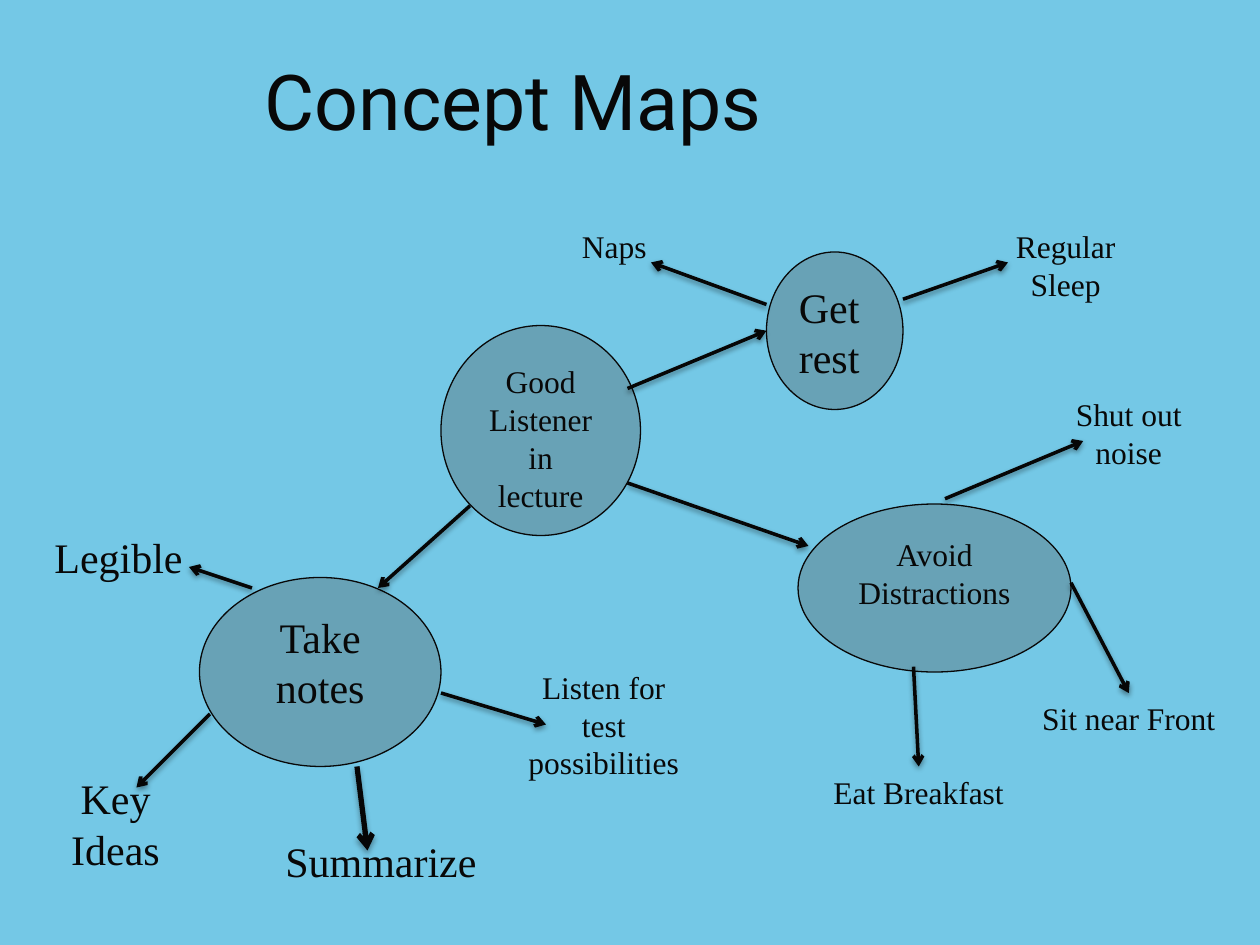
from dataclasses import dataclass

from lxml import etree
from pptx import Presentation
from pptx.dml.color import RGBColor
from pptx.enum.shapes import MSO_CONNECTOR, MSO_SHAPE
from pptx.enum.text import MSO_ANCHOR, MSO_AUTO_SIZE, PP_ALIGN
from pptx.oxml import parse_xml
from pptx.oxml.ns import nsdecls, qn
from pptx.util import Pt

LEFT, CENTER = PP_ALIGN.LEFT, PP_ALIGN.CENTER
TOP, MIDDLE = MSO_ANCHOR.TOP, MSO_ANCHOR.MIDDLE
ELLIPSE, STRAIGHT = MSO_SHAPE.OVAL, MSO_CONNECTOR.STRAIGHT
GROW = MSO_AUTO_SIZE.SHAPE_TO_FIT_TEXT
TITLE_ONLY = 5


@dataclass(frozen=True)
class Theme:
    background: RGBColor = RGBColor(0x74, 0xC8, 0xE6)
    bubble: RGBColor = RGBColor(0x68, 0xA2, 0xB6)
    text: RGBColor = RGBColor(0x08, 0x08, 0x08)
    arrow: RGBColor = RGBColor(0x06, 0x06, 0x06)
    title_font: str = "Roboto"
    body_font: str = "Times New Roman"
    title_size: int = 44
    large: int = 24
    small: int = 18


THEME = Theme()


@dataclass(frozen=True)
class Label:
    """Text in a box or bubble; lengths in points."""
    text: str
    left: float
    top: float
    width: float
    height: float
    size: int = THEME.small
    align: PP_ALIGN = CENTER


@dataclass(frozen=True)
class Arrow:
    """Arrow from (x1, y1) to (x2, y2); lengths in points."""
    x1: float
    y1: float
    x2: float
    y2: float
    weight: float = 2
    shadow_distance: float = 1.6
    shadow_opacity: int = 38


BUBBLES = [
    Label("Good Listener in lecture", 252, 186, 114, 120),
    Label("Get rest", 438, 144, 78, 90, THEME.large, LEFT),
    Label("Avoid Distractions", 456, 288, 156, 96),
    Label("Take notes", 114, 330, 138, 108, THEME.large),
]

DETAILS = [
    # Take notes
    Label("Legible", 24, 300, 96, 36, THEME.large, LEFT),
    Label("Key Ideas", 18, 438, 96, 65.5, THEME.large),
    Label("Listen for test possibilities", 288, 378, 114, 72.7),
    Label("Summarize", 156, 474, 138, 36, THEME.large, LEFT),
    # Get rest
    Label("Regular Sleep", 552, 126, 114, 51),
    Label("Naps", 294, 126, 114, 29),
    # Avoid Distractions
    Label("Shut out noise", 588, 222, 114, 51),
    Label("Sit near Front", 588, 396, 114, 29),
    Label("Eat Breakfast", 468, 438, 114, 29),
]

ARROWS = [
    # Centre to the three topics
    Arrow(268.6, 289, 216, 336),
    Arrow(358.6, 222, 438, 189),
    Arrow(358.6, 276, 462, 312),
    # Take notes
    Arrow(252, 396, 312, 414),
    Arrow(204, 438, 210, 486, 3, 1.8, 35),
    Arrow(144, 336, 108, 324),
    Arrow(120, 408, 78, 450),
    # Get rest
    Arrow(516, 171, 576, 150),
    Arrow(438, 174, 372, 150),
    # Avoid Distractions
    Arrow(540, 285, 619, 252),
    Arrow(612, 333, 645, 396),
    Arrow(522, 381, 525, 438),
]


def write_text(tf, text: str, font: str, size: int, align: PP_ALIGN, anchor=TOP) -> None:
    tf.word_wrap = True
    tf.vertical_anchor = anchor
    p = tf.paragraphs[0]
    p.text = text
    p.alignment = align
    p.font.name = font
    p.font.size = Pt(size)
    p.font.color.rgb = THEME.text


def box(label: Label) -> tuple:
    return Pt(label.left), Pt(label.top), Pt(label.width), Pt(label.height)


def add_bubble(s, label: Label) -> None:
    sp = s.shapes.add_shape(ELLIPSE, *box(label))
    sp.shadow.inherit = False
    sp.fill.solid()
    sp.fill.fore_color.rgb = THEME.bubble
    sp.line.color.rgb = THEME.text
    sp.line.width = Pt(0.75)
    write_text(sp.text_frame, label.text, THEME.body_font, label.size, label.align)


def add_detail(s, label: Label) -> None:
    tf = s.shapes.add_textbox(*box(label)).text_frame
    write_text(tf, label.text, THEME.body_font, label.size, label.align)
    tf.auto_size = GROW


def add_arrow(s, arrow: Arrow) -> None:
    line = s.shapes.add_connector(
        STRAIGHT, Pt(arrow.x1), Pt(arrow.y1), Pt(arrow.x2), Pt(arrow.y2))
    line.line.color.rgb = THEME.arrow
    line.line.width = Pt(arrow.weight)
    # Open arrowhead, then a soft shadow straight below
    etree.SubElement(line.line._get_or_add_ln(), qn("a:tailEnd"), type="arrow")
    line._element.spPr.append(parse_xml(
        f'<a:effectLst {nsdecls("a")}>'
        f'<a:outerShdw blurRad="{Pt(3.1)}" dist="{Pt(arrow.shadow_distance)}"'
        ' dir="5400000" rotWithShape="0">'
        f'<a:srgbClr val="000000"><a:alpha val="{arrow.shadow_opacity * 1000}"/>'
        '</a:srgbClr></a:outerShdw></a:effectLst>'))


def main() -> None:
    prs = Presentation()
    prs.slide_width, prs.slide_height = Pt(720), Pt(540)
    s = prs.slides.add_slide(prs.slide_layouts[TITLE_ONLY])
    s.background.fill.solid()
    s.background.fill.fore_color.rgb = THEME.background

    # Title
    title = s.shapes.title
    title.left, title.top, title.width, title.height = Pt(144), Pt(15), Pt(557), Pt(84)
    write_text(title.text_frame, "Concept Maps", THEME.title_font,
               THEME.title_size, LEFT, MIDDLE)

    # Concept map
    for bubble in BUBBLES:
        add_bubble(s, bubble)
    for detail in DETAILS:
        add_detail(s, detail)
    for arrow in ARROWS:
        add_arrow(s, arrow)

    prs.save("out.pptx")


if __name__ == "__main__":
    main()
